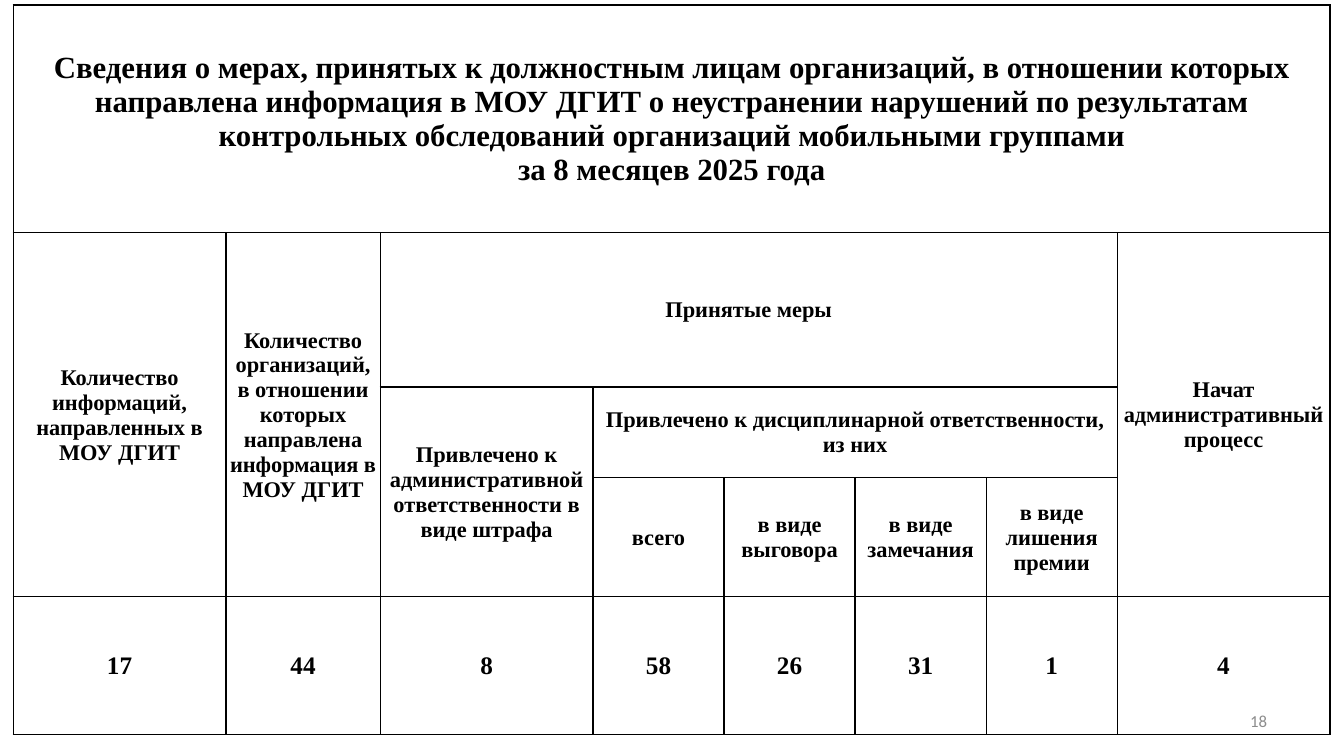
"""Build a slide with a table of measures taken against officials of inspected organizations."""
from lxml import etree
from pptx import Presentation
from pptx.dml.color import RGBColor
from pptx.enum.text import MSO_ANCHOR, PP_ALIGN
from pptx.oxml.ns import qn
from pptx.util import Pt

MIDDLE = MSO_ANCHOR.MIDDLE
CENTER, RIGHT = PP_ALIGN.CENTER, PP_ALIGN.RIGHT

THEME = {
    "table_font": "Times New Roman", "number_font": "Calibri",
    "ink": "000000", "muted": "8C8C8C",
    "title": 22, "heading": 16, "value": 18, "number": 12,
    "border": 1, "inset": 0.6,
}

SLIDE_SIZE = (960, 540)
TABLE_ORIGIN = (9.4, 3.6)
COLUMN_WIDTHS = [152, 110.2, 152] + [93.6] * 4 + [152]
ROW_HEIGHTS = [162.7, 110.2, 64.8, 85, 98.6]
PAGE_NUMBER = "18"
PAGE_NUMBER_BOX = (688.3, 500.4, 223.9, 28.8)

TITLE = (
    "Сведения о мерах, принятых к должностным лицам организаций, в отношении которых "
    "направлена информация в МОУ ДГИТ о неустранении нарушений по результатам "
    "контрольных обследований организаций мобильными группами\v"
    "за 8 месяцев 2025 года"
)
# row, column, rows spanned, columns spanned, text
HEADINGS = [
    (1, 0, 3, 1, "Количество информаций, направленных в МОУ ДГИТ"),
    (1, 1, 3, 1, "Количество организаций, в отношении которых направлена информация в МОУ ДГИТ"),
    (1, 2, 1, 5, "Принятые меры"),
    (1, 7, 3, 1, "Начат административный процесс"),
    (2, 2, 2, 1, "Привлечено к административной ответственности в виде штрафа"),
    (2, 3, 1, 4, "Привлечено к дисциплинарной ответственности, из них"),
    (3, 3, 1, 1, "всего"),
    (3, 4, 1, 1, "в виде выговора"),
    (3, 5, 1, 1, "в виде замечания"),
    (3, 6, 1, 1, "в виде лишения премии"),
]
VALUES = [17, 44, 8, 58, 26, 31, 1, 4]


def write(frame, text, font, size, color, align, bold=False):
    """Put one styled paragraph into a text frame."""
    para = frame.paragraphs[0]
    para.text = text
    para.alignment = align
    para.font.name = THEME[font]
    para.font.size = Pt(THEME[size])
    para.font.bold = bold
    para.font.color.rgb = RGBColor.from_string(THEME[color])


def style_cell(cell):
    """Give a cell thin borders, no fill and narrow margins."""
    properties = cell._tc.get_or_add_tcPr()
    for side in ("a:lnL", "a:lnR", "a:lnT", "a:lnB"):
        line = etree.SubElement(properties, qn(side), w=str(Pt(THEME["border"])))
        fill = etree.SubElement(line, qn("a:solidFill"))
        etree.SubElement(fill, qn("a:srgbClr"), val=THEME["ink"])
    cell.fill.background()
    cell.vertical_anchor = MIDDLE
    cell.margin_left = cell.margin_right = cell.margin_top = Pt(THEME["inset"])
    cell.margin_bottom = 0


def add_page_number(page):
    """Add the page number in the lower right corner."""
    box = page.shapes.add_textbox(*map(Pt, PAGE_NUMBER_BOX))
    box.text_frame.word_wrap = True
    box.text_frame.vertical_anchor = MIDDLE
    write(box.text_frame, PAGE_NUMBER, "number_font", "number", "muted", RIGHT)


def add_measures_table(page):
    """Add the table with its title, headings and values."""
    extent = (sum(COLUMN_WIDTHS), sum(ROW_HEIGHTS))
    table = page.shapes.add_table(
        len(ROW_HEIGHTS), len(COLUMN_WIDTHS), *map(Pt, TABLE_ORIGIN + extent)
    ).table
    table.first_row = table.horz_banding = False
    for column, width in zip(table.columns, COLUMN_WIDTHS):
        column.width = Pt(width)
    for row, height in zip(table.rows, ROW_HEIGHTS):
        row.height = Pt(height)
    for cell in table.iter_cells():
        style_cell(cell)

    last_row = len(ROW_HEIGHTS) - 1
    entries = [(0, 0, 1, len(COLUMN_WIDTHS), TITLE, "title")]
    entries += [heading + ("heading",) for heading in HEADINGS]
    entries += [(last_row, i, 1, 1, str(value), "value") for i, value in enumerate(VALUES)]
    for top, left, rows, columns, text, size in entries:
        cell = table.cell(top, left)
        if rows * columns > 1:
            cell.merge(table.cell(top + rows - 1, left + columns - 1))
        write(cell.text_frame, text, "table_font", size, "ink", CENTER, bold=True)


def main():
    """Create and save the deck."""
    deck = Presentation()
    deck.slide_width, deck.slide_height = map(Pt, SLIDE_SIZE)
    page = deck.slides.add_slide(deck.slide_layouts[6])
    add_page_number(page)
    add_measures_table(page)
    deck.save("out.pptx")


if __name__ == "__main__":
    main()
